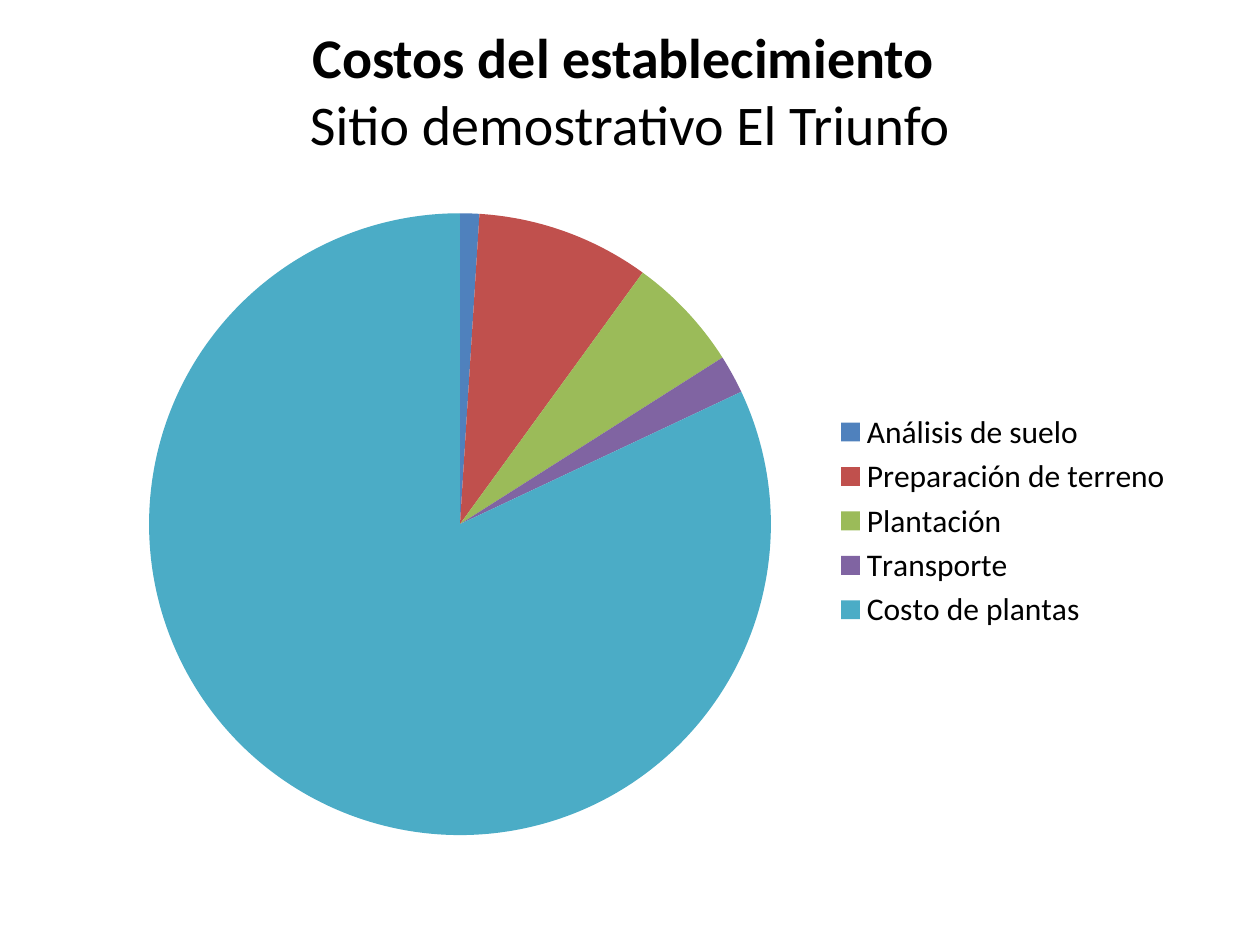
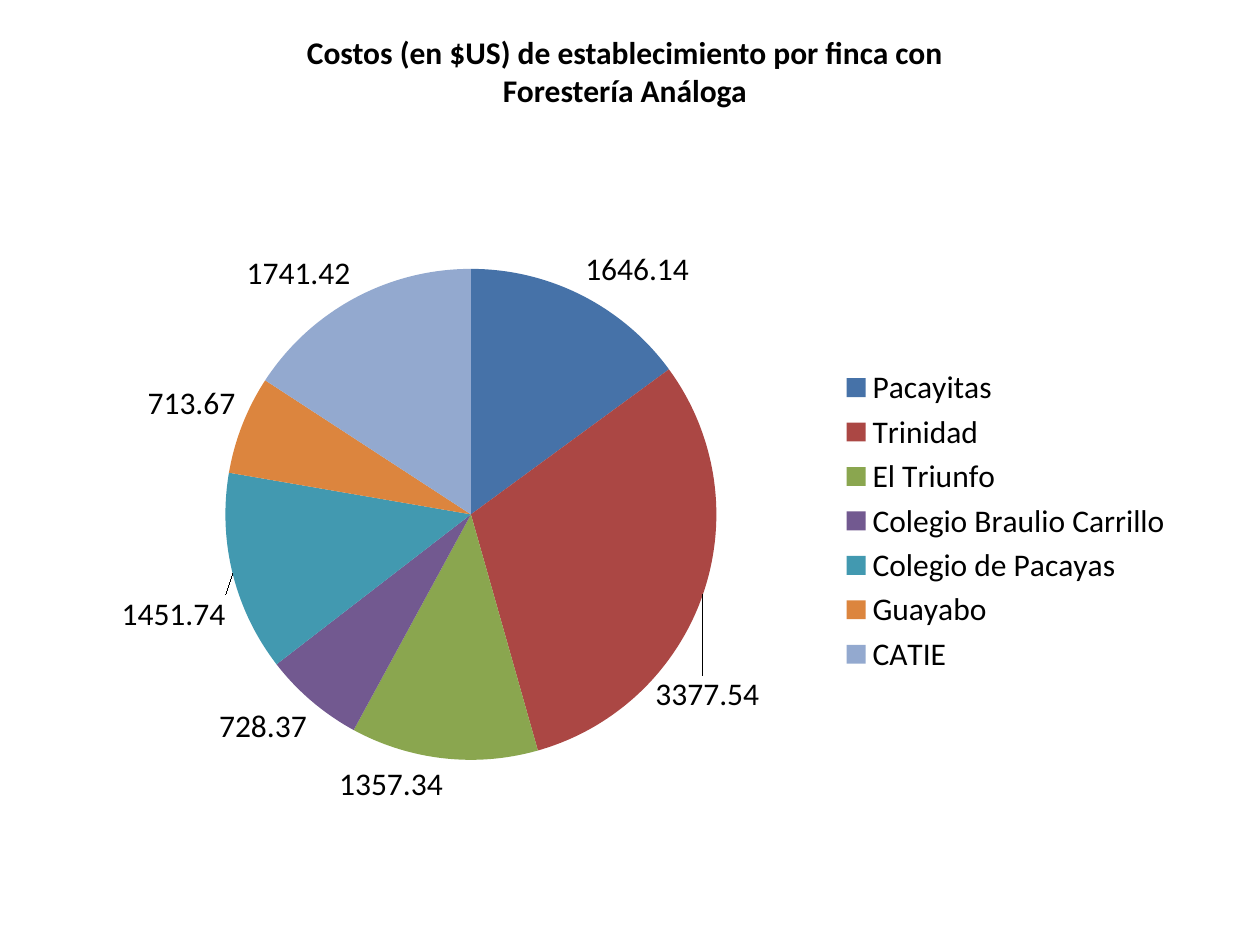
from lxml import etree
from pptx import Presentation
from pptx.chart.data import CategoryChartData
from pptx.dml.color import RGBColor
from pptx.enum.chart import XL_CHART_TYPE, XL_LABEL_POSITION, XL_LEGEND_POSITION
from pptx.enum.text import MSO_ANCHOR, MSO_AUTO_SIZE, PP_ALIGN
from pptx.oxml.ns import qn
from pptx.util import Inches, Pt

PIE = XL_CHART_TYPE.PIE
OUTSIDE = XL_LABEL_POSITION.OUTSIDE_END
RIGHT = XL_LEGEND_POSITION.RIGHT
TOP = MSO_ANCHOR.TOP
NO_AUTOFIT = MSO_AUTO_SIZE.NONE
CENTER = PP_ALIGN.CENTER

FONT = "Calibri"
BLACK = RGBColor(0x00, 0x00, 0x00)
BRIGHT = [RGBColor(0x4F, 0x81, 0xBD), RGBColor(0xC0, 0x50, 0x4D),
          RGBColor(0x9B, 0xBB, 0x59), RGBColor(0x80, 0x64, 0xA2),
          RGBColor(0x4B, 0xAC, 0xC6)]
MUTED = [RGBColor(0x46, 0x72, 0xA8), RGBColor(0xAB, 0x47, 0x44),
         RGBColor(0x8A, 0xA6, 0x4F), RGBColor(0x72, 0x59, 0x90),
         RGBColor(0x42, 0x99, 0xB0), RGBColor(0xDC, 0x85, 0x3E),
         RGBColor(0x93, 0xA9, 0xCF)]

WIDTH, HEIGHT = Inches(10), Inches(7.5)
CHART_BOX = (Inches(0.75), Inches(1.53), Inches(8.66), Inches(5.21))

COST_SHARES = {"Análisis de suelo": 1, "Preparación de terreno": 9,
               "Plantación": 6, "Transporte": 2, "Costo de plantas": 82}
FARM_COSTS = {"Pacayitas": 1646.14, "Trinidad": 3377.54, "El Triunfo": 1357.34,
              "Colegio Braulio Carrillo": 728.37, "Colegio de Pacayas": 1451.74,
              "Guayabo": 713.67, "CATIE": 1741.42}
LABEL_SHIFTS = {1: (-0.05, 0.12), 4: (0, 0.03)}


def set_font(font, size):
    """Apply the shared typeface and colour at a size."""
    font.name = FONT
    font.size = Pt(size)
    font.color.rgb = BLACK


def add_title(slide, box, size, lines):
    """Place the title, with its first line bold."""
    sp = slide.shapes.title
    sp.left, sp.top, sp.width, sp.height = box
    tf = sp.text_frame
    tf.word_wrap = True
    tf.auto_size = NO_AUTOFIT
    tf.vertical_anchor = TOP
    p = tf.paragraphs[0]
    p.alignment = CENTER
    set_font(p.font, size)
    for i, line in enumerate(lines):
        if i:
            p.add_line_break()
        r = p.add_run()
        r.text = line
        r.font.bold = i == 0
        set_font(r.font, size)


def set_layout(parent, index, **values):
    """Give a chart part a manual layout in shares of the chart."""
    for old in parent.findall(qn("c:layout")):
        parent.remove(old)
    layout = etree.Element(qn("c:layout"))
    manual = etree.SubElement(layout, qn("c:manualLayout"))
    for name, value in values.items():
        etree.SubElement(manual, qn(f"c:{name}")).set("val", str(value))
    parent.insert(index, layout)


def add_pie(slide, box, costs, colors, plot_box):
    """Draw a pie with a legend on the right and return its series."""
    data = CategoryChartData()
    data.categories = list(costs)
    data.add_series("Series 1", list(costs.values()))
    chart = slide.shapes.add_chart(PIE, *box, data).chart
    set_font(chart.font, 18)
    chart.has_title = False
    chart.has_legend = True
    chart.legend.position = RIGHT
    chart.legend.include_in_layout = False
    plot = chart.plots[0]
    plot.vary_by_categories = True
    series = plot.series[0]
    for i, color in enumerate(colors):
        fill = series.points[i].format.fill
        fill.solid()
        fill.fore_color.rgb = color
    x, y, w, h = plot_box
    area = chart.element.find(f".//{qn('c:plotArea')}")
    set_layout(area, 0, layoutTarget="inner", xMode="edge", yMode="edge",
               x=x, y=y, w=w, h=h)
    return series


def add_value_labels(series, shifts):
    """Show unwrapped values outside the slices, moving some of them."""
    labels = series.data_labels
    labels.show_value = True
    labels.show_percentage = False
    labels.position = OUTSIDE
    set_font(labels.font, 18)
    for i in shifts:
        label = series.points[i].data_label
        label.position = OUTSIDE
        set_font(label.font, 18)
    element = labels._element
    for body in element.iter(qn("a:bodyPr")):
        body.set("wrap", "none")
    for label in element.findall(qn("c:dLbl")):
        x, y = shifts[int(label.find(qn("c:idx")).get("val"))]
        set_layout(label, 1, x=x, y=y)


def build_site_costs(slide):
    """Build the cost shares of the demonstration site."""
    box = (Inches(0.75), Inches(0.13), Inches(8.5), Inches(0.79))
    add_title(slide, box, 32,
              ["Costos del establecimiento ", "Sitio demostrativo El Triunfo"])
    add_pie(slide, CHART_BOX, COST_SHARES, BRIGHT, (0.05, 0.03, 0.57, 0.95))


def build_farm_costs(slide):
    """Build the establishment costs of each farm."""
    box = (Inches(1.85), Inches(0.21), Inches(6.22), Inches(0.71))
    add_title(slide, box, 18, ["Costos (en $US) de establecimiento por finca "
                               "con Forestería Análoga"])
    series = add_pie(slide, CHART_BOX, FARM_COSTS, MUTED,
                     (0.12, 0.11, 0.45, 0.76))
    add_value_labels(series, LABEL_SHIFTS)


def main():
    """Build and save the presentation."""
    prs = Presentation()
    prs.slide_width, prs.slide_height = WIDTH, HEIGHT
    for build in (build_site_costs, build_farm_costs):
        build(prs.slides.add_slide(prs.slide_layouts[5]))
    prs.save("out.pptx")


if __name__ == "__main__":
    main()
